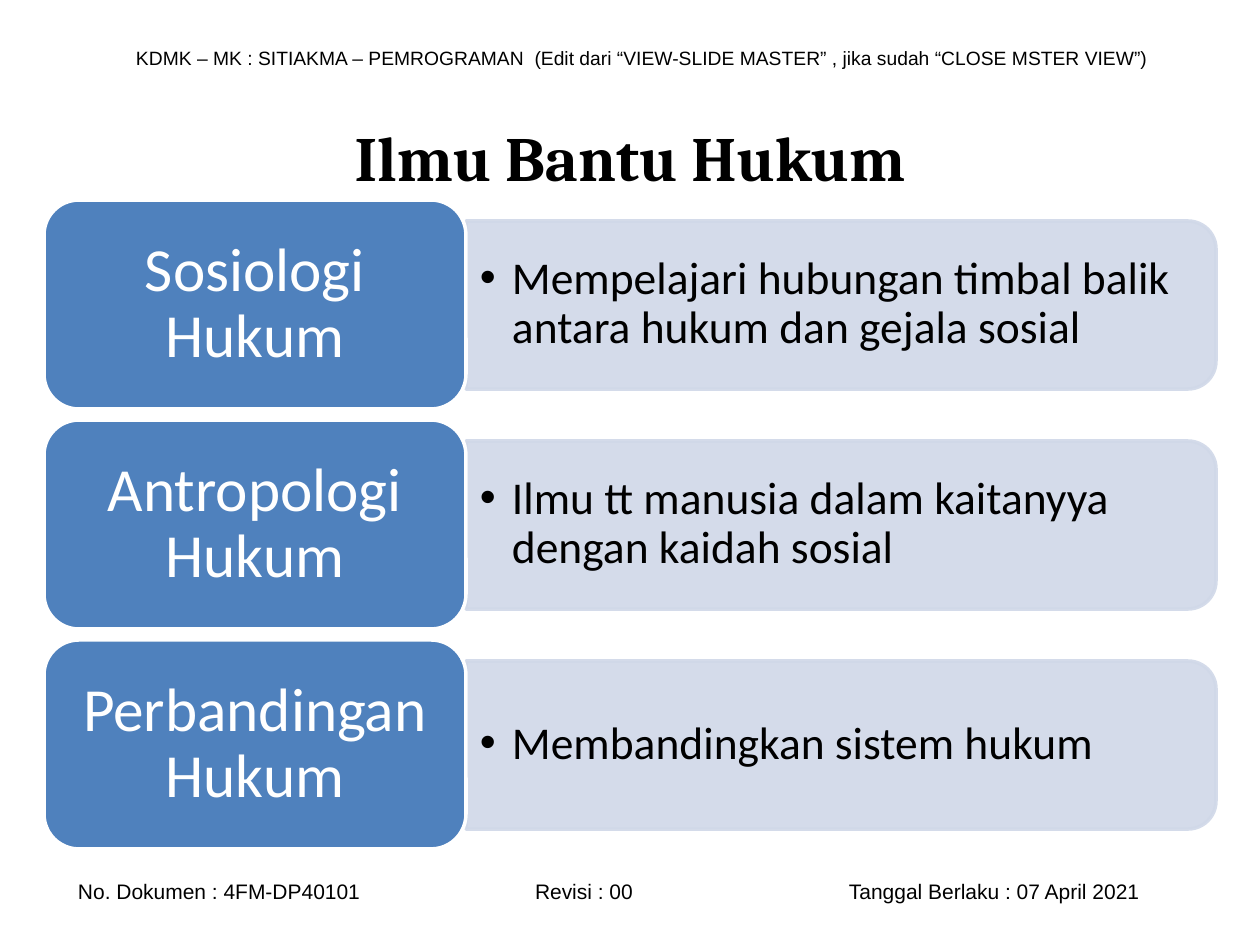
"""Build the "Ilmu Bantu Hukum" slide with three labelled rows."""
from lxml import etree
from pptx import Presentation
from pptx import util as u
from pptx.dml.color import RGBColor
from pptx.enum import shapes, text
from pptx.oxml.ns import qn

PX = 914400 // 126
BLACK, WHITE, BLUE, PALE = "000000", "FFFFFF", "4F81BD", "D0D8E8"


def paint(fill, color):
    """Fill with a solid hex colour."""
    fill.solid()
    fill.fore_color.rgb = RGBColor.from_string(color)


def write(shape, content, color, align, font, margins=(13, 6), spacing=1.0):
    """Write one vertically centred paragraph and return it."""
    side, edge = (margin * PX for margin in margins)
    frame_format = {
        "word_wrap": True, "vertical_anchor": text.MSO_ANCHOR.MIDDLE,
        "margin_left": side, "margin_right": side,
        "margin_top": edge, "margin_bottom": edge,
    }
    for name, value in frame_format.items():
        setattr(shape.text_frame, name, value)
    paragraph = shape.text_frame.paragraphs[0]
    paragraph.alignment = align
    paragraph.line_spacing = spacing
    run = paragraph.add_run()
    run.text = content
    for name, value in font.items():
        setattr(run.font, name, value)
    paint(run.font.fill, color)
    return paragraph


presentation = Presentation()
presentation.slide_width = 1260 * PX
presentation.slide_height = 945 * PX
slide = presentation.slides.add_slide(presentation.slide_layouts[6])
align = text.PP_ALIGN

header = slide.shapes.add_textbox(123 * PX, 39 * PX, 1052 * PX, 37 * PX)
write(header, "KDMK – MK : SITIAKMA – PEMROGRAMAN  (Edit dari “VIEW-SLIDE MASTER” , jika sudah “CLOSE MSTER VIEW”)",
      BLACK, align.JUSTIFY, {"name": "Arial", "size": u.Pt(11)})

footer = slide.shapes.add_textbox(25 * PX, 872 * PX, 1191 * PX, 38 * PX)
footer_line = write(footer, "\tNo. Dokumen : 4FM-DP40101\tRevisi : 00\tTanggal Berlaku : 07 April 2021",
                    BLACK, align.LEFT, {"name": "Arial", "size": u.Pt(12)})
tabs = etree.SubElement(footer_line._p.get_or_add_pPr(), qn("a:tabLst"))
for position in (40, 497, 811):
    etree.SubElement(tabs, qn("a:tab"), pos=str(position * PX), algn="l")

title = slide.shapes.add_textbox(63 * PX, 77 * PX, 1134 * PX, 158 * PX)
write(title, "Ilmu Bantu Hukum", BLACK, align.CENTER,
      {"name": "Cambria", "size": u.Pt(36), "bold": True})

rows = [
    ("Sosiologi Hukum", "Mempelajari hubungan timbal balik antara hukum dan gejala sosial"),
    ("Antropologi Hukum", "Ilmu tt manusia dalam kaitanyya dengan kaidah sosial"),
    ("Perbandingan Hukum", "Membandingkan sistem hukum"),
]
for index, (topic, description) in enumerate(rows):
    top = 200 + 220 * index
    bar = slide.shapes.add_shape(shapes.MSO_SHAPE.ROUND_2_SAME_RECTANGLE,
                                 757 * PX, (top - 270) * PX, 168 * PX, 750 * PX)
    bar.rotation = 90
    label = slide.shapes.add_shape(shapes.MSO_SHAPE.ROUNDED_RECTANGLE,
                                   44 * PX, top * PX, 422 * PX, 209 * PX)
    for shape, fill, line in ((bar, PALE, PALE), (label, BLUE, WHITE)):
        shape.shadow.inherit = False
        paint(shape.fill, fill)
        paint(shape.line.fill, line)
        shape.line.width = u.Pt(2)
    for color in bar._element.spPr.iter(qn("a:srgbClr")):
        etree.SubElement(color, qn("a:alpha"), val="90000")

    write(label, topic, WHITE, align.CENTER, {"name": "Calibri", "size": u.Pt(35)},
          margins=(19, 9), spacing=0.9)
    detail = slide.shapes.add_textbox(466 * PX, (top + 29) * PX, 741 * PX, 151 * PX)
    item = write(detail, description, BLACK, align.LEFT,
                 {"name": "Calibri", "size": u.Pt(26)}, margins=(14, 6), spacing=0.9)
    properties = item._p.get_or_add_pPr()
    properties.set("marL", str(32 * PX))
    properties.set("indent", str(-32 * PX))
    etree.SubElement(properties, qn("a:buFont"), typeface="Arial")
    etree.SubElement(properties, qn("a:buChar"), char="•")

presentation.save("out.pptx")
